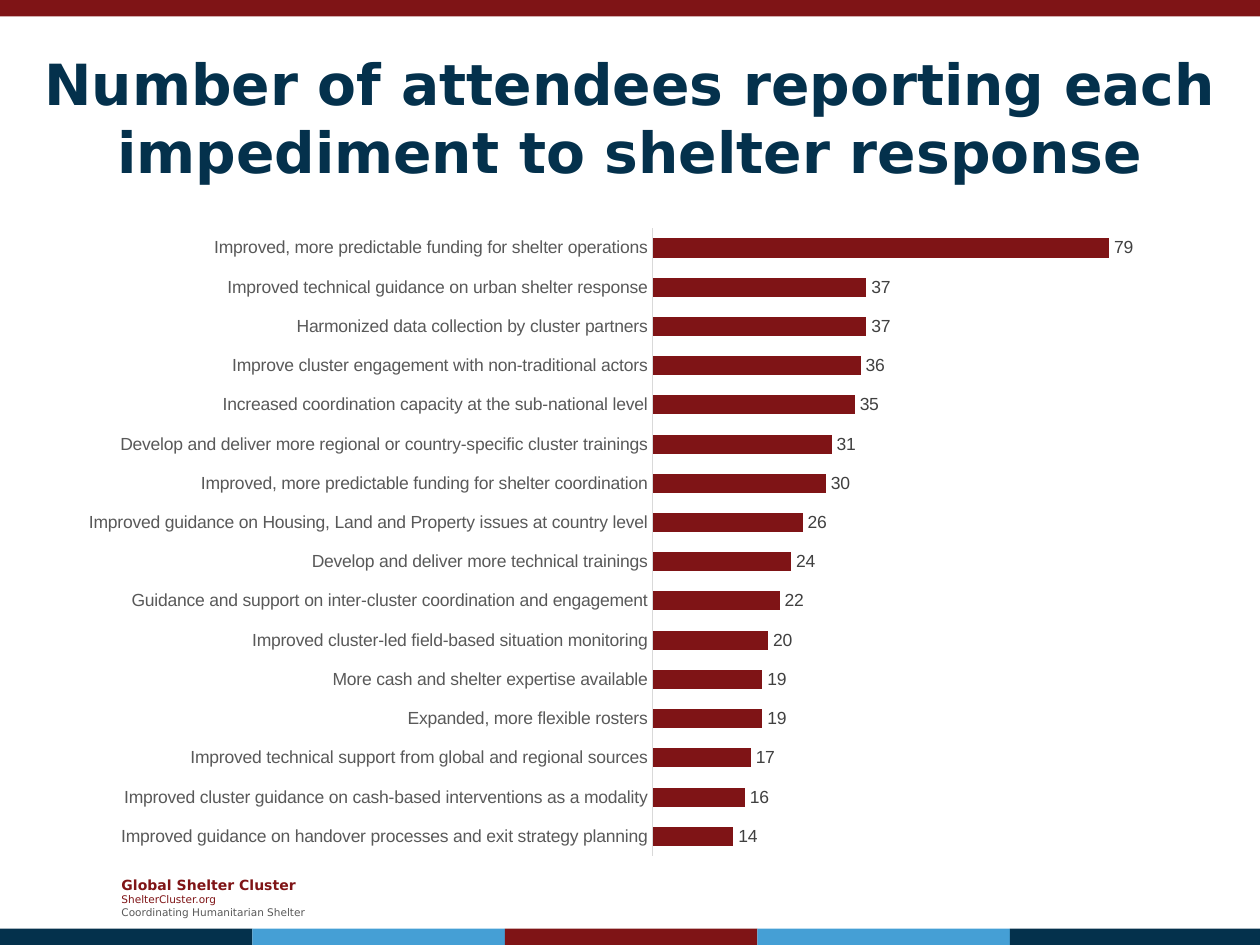
from typing import Any, NamedTuple

import lxml.etree
import pptx
import pptx.chart.data
import pptx.dml.color
import pptx.enum.chart
import pptx.enum.shapes
import pptx.enum.text
import pptx.oxml
import pptx.oxml.ns
import pptx.util
from pptx.util import Cm

COLORS = {"red": "7F1416", "navy": "04314C", "sky": "459FD5",
          "grey": "595959", "dark": "404040", "rule": "D9D9D9"}
HEADING_FONT, CHART_FONT = "DejaVu Sans", "Arial"
PAGE_WIDTH, PAGE_HEIGHT = 25.4, 19.05
BAND_HEIGHT, STRIPE_WIDTH = 0.33, 5.09


class Band(NamedTuple):
    left: float
    top: float
    width: float
    color: str


class FooterLine(NamedTuple):
    text: str
    size: float
    color: str
    bold: bool


class Impediment(NamedTuple):
    name: str
    attendees: int


STRIPES = ("navy", "sky", "red", "sky", "navy")
BANDS = [Band(0, 0, PAGE_WIDTH, "red")] + [
    Band(i * STRIPE_WIDTH, PAGE_HEIGHT - BAND_HEIGHT,
         min(STRIPE_WIDTH, PAGE_WIDTH - i * STRIPE_WIDTH), color)
    for i, color in enumerate(STRIPES)]

FOOTER = (
    FooterLine("Global Shelter Cluster", 8, "red", True),
    FooterLine("ShelterCluster.org", 6, "red", False),
    FooterLine("Coordinating Humanitarian Shelter", 6, "grey", False),
)

IMPEDIMENTS = (
    Impediment("Improved guidance on handover processes and exit strategy planning", 14),
    Impediment("Improved cluster guidance on cash-based interventions as a modality", 16),
    Impediment("Improved technical support from global and regional sources", 17),
    Impediment("Expanded, more flexible rosters", 19),
    Impediment("More cash and shelter expertise available", 19),
    Impediment("Improved cluster-led field-based situation monitoring", 20),
    Impediment("Guidance and support on inter-cluster coordination and engagement", 22),
    Impediment("Develop and deliver more technical trainings", 24),
    Impediment("Improved guidance on Housing, Land and Property issues at country level", 26),
    Impediment("Improved, more predictable funding for shelter coordination", 30),
    Impediment("Develop and deliver more regional or country-specific cluster trainings", 31),
    Impediment("Increased coordination capacity at the sub-national level", 35),
    Impediment("Improve cluster engagement with non-traditional actors", 36),
    Impediment("Harmonized data collection by cluster partners", 37),
    Impediment("Improved technical guidance on urban shelter response", 37),
    Impediment("Improved, more predictable funding for shelter operations", 79),
)


def rgb(color: str) -> pptx.dml.color.RGBColor:
    return pptx.dml.color.RGBColor.from_string(COLORS[color])


def set_values(target: Any, values: dict[str, Any]) -> None:
    for name, value in values.items():
        setattr(target, name, value)


def format_font(font: Any, name: str, size: float, color: str, bold: bool = False) -> None:
    set_values(font, {"name": name, "size": pptx.util.Pt(size), "bold": bold})
    font.color.rgb = rgb(color)


def draw_band(page: Any, band: Band) -> None:
    box = page.shapes.add_shape(
        pptx.enum.shapes.MSO_SHAPE.RECTANGLE,
        Cm(band.left), Cm(band.top), Cm(band.width), Cm(BAND_HEIGHT))
    box.shadow.inherit = False
    box.fill.solid()
    box.fill.fore_color.rgb = rgb(band.color)
    box.line.fill.background()


def draw_footer(page: Any) -> None:
    box = page.shapes.add_textbox(Cm(2.2), Cm(17.53), Cm(4.4), Cm(1.12))
    frame = box.text_frame
    set_values(frame, {"word_wrap": True,
                       "vertical_anchor": pptx.enum.text.MSO_ANCHOR.MIDDLE})
    for i, line in enumerate(FOOTER):
        para = frame.add_paragraph() if i else frame.paragraphs[0]
        span = para.add_run()
        span.text = line.text
        format_font(span.font, HEADING_FONT, line.size, line.color, line.bold)


def draw_title(page: Any) -> None:
    title = page.shapes.title
    set_values(title, {"left": Cm(0), "top": Cm(0.76),
                       "width": Cm(PAGE_WIDTH), "height": Cm(3.18)})
    frame = title.text_frame
    frame.text = "Number of attendees reporting each impediment to shelter response"
    set_values(frame, {"word_wrap": True,
                       "auto_size": pptx.enum.text.MSO_AUTO_SIZE.NONE,
                       "vertical_anchor": pptx.enum.text.MSO_ANCHOR.MIDDLE})
    para = frame.paragraphs[0]
    para.alignment = pptx.enum.text.PP_ALIGN.CENTER
    format_font(para.runs[0].font, HEADING_FONT, 32.4, "navy", True)


def place_plot(chart: Any, **fractions: float) -> None:
    """Fix the inner plot area as fractions of the chart's size."""
    qn = pptx.oxml.ns.qn
    plot_area = chart.plots[0]._element.getparent()
    for old in plot_area.findall(qn("c:layout")):
        plot_area.remove(old)
    layout = lxml.etree.Element(qn("c:layout"))
    manual = lxml.etree.SubElement(layout, qn("c:manualLayout"))
    settings = {"layoutTarget": "inner", "xMode": "edge", "yMode": "edge", **fractions}
    for tag, value in settings.items():
        lxml.etree.SubElement(manual, qn(f"c:{tag}"), val=str(value))
    plot_area.insert(0, layout)


def draw_chart(page: Any) -> None:
    chart_enum = pptx.enum.chart
    data = pptx.chart.data.CategoryChartData()
    data.categories = [item.name for item in IMPEDIMENTS]
    data.add_series("Series 1", [item.attendees for item in IMPEDIMENTS])
    chart = page.shapes.add_chart(
        chart_enum.XL_CHART_TYPE.BAR_CLUSTERED,
        Cm(1.3), Cm(4.34), Cm(22.8), Cm(13.18), data).chart
    set_values(chart, {"has_legend": False, "has_title": False})
    format_font(chart.font, CHART_FONT, 10, "grey")

    set_values(chart.value_axis, {"visible": False, "has_major_gridlines": False,
                                  "minimum_scale": 0, "maximum_scale": 90})
    axis = chart.category_axis
    set_values(axis, {"major_tick_mark": chart_enum.XL_TICK_MARK.NONE,
                      "minor_tick_mark": chart_enum.XL_TICK_MARK.NONE})
    format_font(axis.tick_labels.font, CHART_FONT, 10, "grey")
    axis.format.line.color.rgb = rgb("rule")
    axis.format.line.width = pptx.util.Pt(0.75)

    plot = chart.plots[0]
    set_values(plot, {"gap_width": 105, "vary_by_categories": False,
                      "has_data_labels": True})
    set_values(plot.data_labels, {
        "show_value": True,
        "position": chart_enum.XL_LABEL_POSITION.OUTSIDE_END})
    format_font(plot.data_labels.font, CHART_FONT, 10, "dark")
    fill = plot.series[0].format.fill
    fill.solid()
    fill.fore_color.rgb = rgb("red")
    place_plot(chart, x=0.52, y=0.02, w=0.46, h=0.96)


def main() -> None:
    deck = pptx.Presentation()
    set_values(deck, {"slide_width": Cm(PAGE_WIDTH), "slide_height": Cm(PAGE_HEIGHT)})
    page = deck.slides.add_slide(deck.slide_layouts.get_by_name("Title Only"))
    draw_footer(page)
    for band in BANDS:
        draw_band(page, band)
    draw_title(page)
    draw_chart(page)
    deck.save("out.pptx")


if __name__ == "__main__":
    main()
